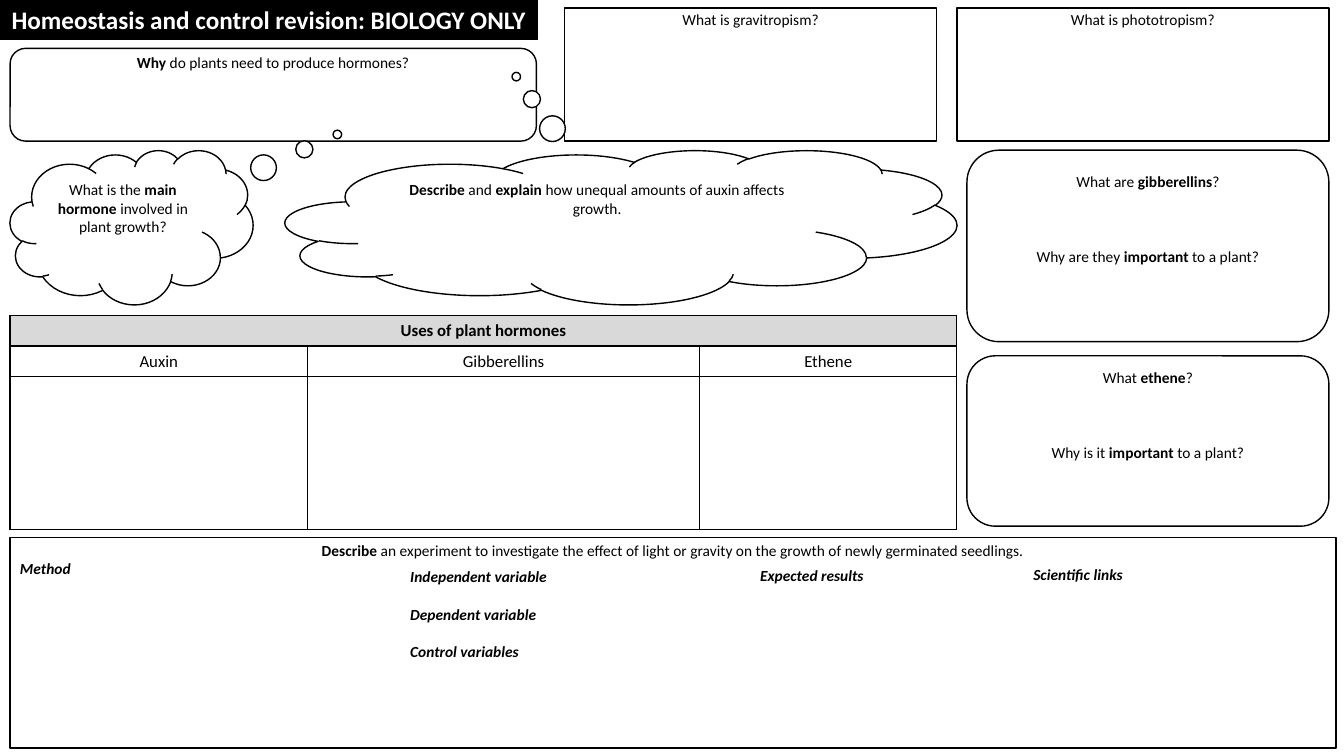
from lxml import etree
from pptx import Presentation
from pptx.dml.color import RGBColor
from pptx.enum import shapes, text
from pptx.oxml import ns
from pptx.util import Inches, Pt

BLACK = RGBColor(0x00, 0x00, 0x00)
WHITE = RGBColor(0xFF, 0xFF, 0xFF)
GREY = RGBColor(0xD9, 0xD9, 0xD9)
FONT = "Calibri"
LINE_HEIGHT = 13.4


def write_lines(frame, lines, align, gap=0, size=11, bold=None, italic=None):
    """Write one paragraph per line, with words between asterisks in bold."""
    for index, line in enumerate(lines):
        paragraph = frame.paragraphs[0] if index == 0 else frame.add_paragraph()
        paragraph.alignment = align
        paragraph.space_before = Pt(gap if index else 0)
        font = paragraph.font
        font.name, font.size, font.color.rgb = FONT, Pt(size), BLACK
        font.bold, font.italic = bold, italic
        for position, part in enumerate(line.split("*")):
            if part:
                run = paragraph.add_run()
                run.text = part
                if position % 2:
                    run.font.bold = True


def add_title(slide, box, title):
    """Fill the title placeholder as a black banner."""
    shape = slide.shapes.title
    shape.left, shape.top, shape.width, shape.height = map(Inches, box)
    shape.fill.solid()
    shape.fill.fore_color.rgb = BLACK
    shape.line.color.rgb = BLACK
    shape.line.width = Pt(1)
    frame = shape.text_frame
    frame.text = title
    frame.auto_size = text.MSO_AUTO_SIZE.NONE
    frame.word_wrap = False
    frame.vertical_anchor = text.MSO_ANCHOR.MIDDLE
    paragraph = frame.paragraphs[0]
    paragraph.alignment = text.PP_ALIGN.CENTER
    font = paragraph.font
    font.name, font.size, font.bold, font.color.rgb = FONT, Pt(18), True, WHITE


def add_question(slide, kind, box, lines, inset, tail=None):
    """Add an outlined answer box with its questions at the top."""
    shape = slide.shapes.add_shape(kind, *map(Inches, box))
    shape.shadow.inherit = False
    shape.fill.solid()
    shape.fill.fore_color.rgb = WHITE
    shape.line.color.rgb = BLACK
    shape.line.width = Pt(1)
    if tail:
        shape.adjustments[0], shape.adjustments[1] = tail
    frame = shape.text_frame
    frame.word_wrap = True
    frame.vertical_anchor = text.MSO_ANCHOR.TOP
    frame.margin_top, frame.margin_bottom = Inches(inset), 0
    write_lines(frame, lines, text.PP_ALIGN.CENTER, gap=3 * LINE_HEIGHT)


def add_border(cell):
    """Draw a thin black line on each side of a table cell."""
    properties = cell._tc.get_or_add_tcPr()
    for index, side in enumerate(("lnL", "lnR", "lnT", "lnB")):
        line = etree.Element(ns.qn(f"a:{side}"), w=str(Pt(1)))
        fill = etree.SubElement(line, ns.qn("a:solidFill"))
        etree.SubElement(fill, ns.qn("a:srgbClr"), val=str(BLACK))
        properties.insert(index, line)


def add_uses_table(slide, box, heading, hormones, widths, heights):
    """Add the table of hormone uses with an empty answer row."""
    frame = slide.shapes.add_table(len(heights), len(widths), *map(Inches, box))
    table = frame.table
    table.first_row = table.horz_banding = False
    for column, width in zip(table.columns, widths):
        column.width = Inches(width)
    for row, height in zip(table.rows, heights):
        row.height = Inches(height)
    for row_index, row in enumerate(table.rows):
        for cell in row.cells:
            cell.fill.solid()
            cell.fill.fore_color.rgb = WHITE if row_index else GREY
            add_border(cell)
    table.cell(0, 0).merge(table.cell(0, len(widths) - 1))
    center = text.PP_ALIGN.CENTER
    write_lines(table.cell(0, 0).text_frame, [heading], center, size=12, bold=True)
    for index, hormone in enumerate(hormones):
        write_lines(table.cell(1, index).text_frame, [hormone], center, size=12, bold=False)


def add_experiment(slide, box):
    """Add the experiment panel and the labels of its parts."""
    left, top = box[:2]
    add_question(slide, shapes.MSO_SHAPE.RECTANGLE, box, [
        "*Describe* an experiment to investigate the effect of light or gravity "
        "on the growth of newly germinated seedlings."], 0.04)
    labels = [
        (0, 0.17, 1.24, 0.29, ["Method"]),
        (3.87, 0.25, 1.87, 1.03,
         ["Independent variable", "Dependent variable", "Control variables"]),
        (7.34, 0.24, 1.87, 0.29, ["Expected results"]),
        (10.05, 0.23, 1.87, 0.29, ["Scientific links"]),
    ]
    for x, y, width, height, lines in labels:
        label = slide.shapes.add_textbox(
            Inches(left + x), Inches(top + y), Inches(width), Inches(height))
        label.text_frame.word_wrap = True
        write_lines(label.text_frame, lines, text.PP_ALIGN.LEFT,
                    gap=LINE_HEIGHT, bold=True, italic=True)


def add_plant_questions(slide):
    """Add the question boxes and thought clouds around the table."""
    kinds = shapes.MSO_SHAPE
    add_question(slide, kinds.ROUNDED_RECTANGLE, (0.1, 0.48, 5.22, 0.92),
                 ["*Why* do plants need to produce hormones?"], 0)
    for left, response in ((5.6, "gravitropism"), (9.49, "phototropism")):
        add_question(slide, kinds.RECTANGLE, (left, 0.08, 3.69, 1.32),
                     [f"What is {response}?"], 0.02)
    add_question(slide, kinds.CLOUD_CALLOUT, (0.1, 1.49, 2.41, 1.53),
                 ["What is the *main hormone* involved in plant growth?"],
                 0.07, (0.847, -0.602))
    add_question(slide, kinds.CLOUD_CALLOUT, (2.83, 1.49, 6.66, 1.53),
                 ["*Describe* and *explain* how unequal amounts of auxin affects growth."],
                 0.07, (-0.156, -0.977))
    add_question(slide, kinds.ROUNDED_RECTANGLE, (9.59, 1.49, 3.59, 1.9),
                 ["What are *gibberellins*?", "Why are they *important* to a plant?"], 0.13)
    add_question(slide, kinds.ROUNDED_RECTANGLE, (9.59, 3.53, 3.59, 1.69),
                 ["What *ethene*?", "Why is it *important* to a plant?"], 0.04)


def main():
    """Build the revision sheet and save it."""
    presentation = Presentation()
    presentation.slide_width, presentation.slide_height = Inches(13.33), Inches(7.5)
    slide = presentation.slides.add_slide(presentation.slide_layouts[5])
    add_title(slide, (0, 0, 5.33, 0.39), "Homeostasis and control revision: BIOLOGY ONLY")
    add_plant_questions(slide)
    add_uses_table(slide, (0.1, 3.13, 9.39, 2.12), "Uses of plant hormones",
                   ["Auxin", "Gibberellins", "Ethene"],
                   [2.95, 3.89, 2.55], [0.3, 0.3, 1.52])
    add_experiment(slide, (0.1, 5.33, 13.15, 2.09))
    presentation.save("out.pptx")


if __name__ == "__main__":
    main()
